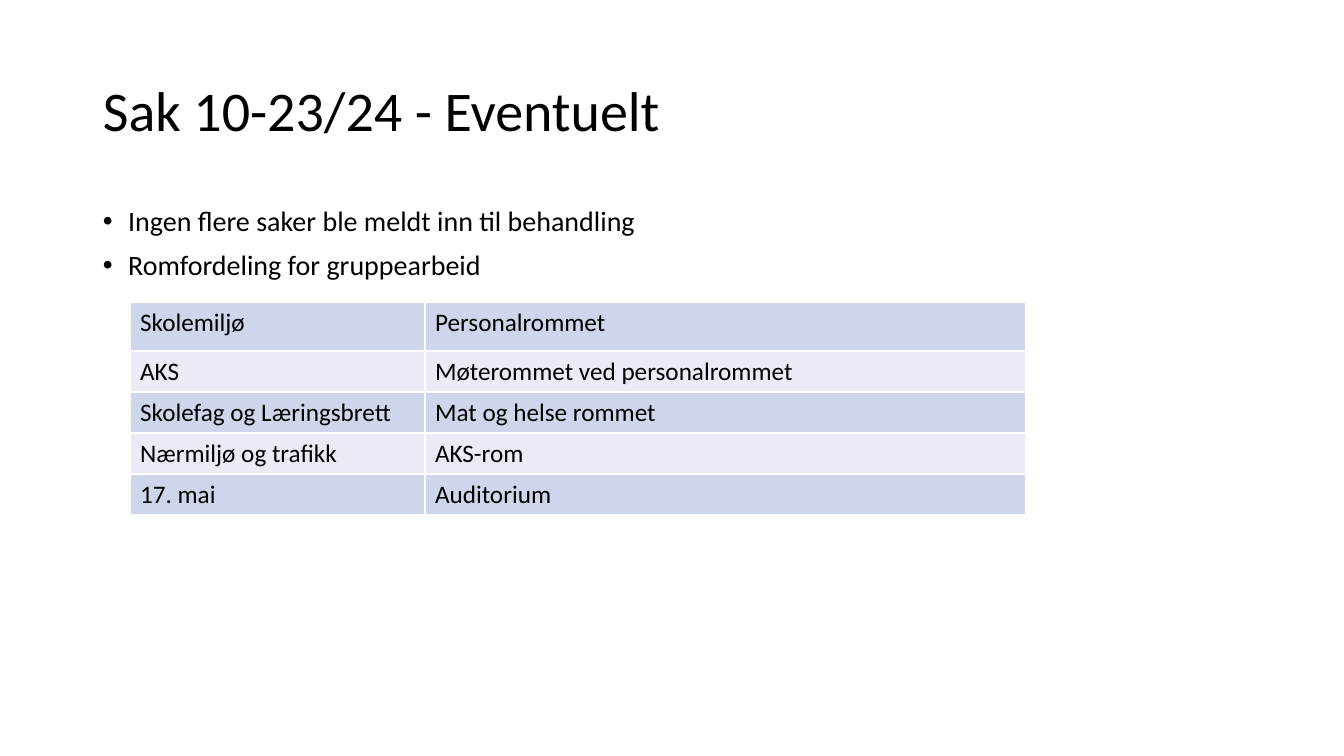
from pptx import Presentation
from pptx import util as u
from pptx.dml.color import RGBColor
from pptx.enum import text
from pptx.oxml import parse_xml
from pptx.oxml.ns import nsdecls

PX = 914400 / 100.8
INK = {"text": "000000", "line": "FFFFFF", "odd": "CFD5EA", "even": "E9EBF5"}


def px(n):
    return round(n * PX)


def write(frame, lines, size=18, space=None, gap=0, bullet=False):
    frame.word_wrap = True
    for i, line in enumerate(lines):
        para = frame.paragraphs[0] if i == 0 else frame.add_paragraph()
        if bullet:
            props = para._p.get_or_add_pPr()
            props.set("marL", str(u.Inches(0.25)))
            props.set("indent", str(-u.Inches(0.25)))
            props.append(parse_xml(f'<a:buFont {nsdecls("a")} typeface="Arial"/>'))
            props.append(parse_xml(f'<a:buChar {nsdecls("a")} char="•"/>'))
        if space:
            para.line_spacing = space
        if i and gap:
            para.space_before = u.Pt(gap)
        run = para.add_run()
        run.text = line
        run.font.name = "Calibri"
        run.font.size = u.Pt(size)
        run.font.color.rgb = RGBColor.from_string(INK["text"])


deck = Presentation()
deck.slide_width, deck.slide_height = px(1344), px(756)
slide = deck.slides.add_slide(deck.slide_layouts[6])

title = slide.shapes.add_textbox(px(93), px(40), px(1159), px(146)).text_frame
title.vertical_anchor = text.MSO_ANCHOR.MIDDLE
write(title, ["Sak 10-23/24 - Eventuelt"], size=40, space=0.9)

body = slide.shapes.add_textbox(px(93), px(202), px(1159), px(480)).text_frame
points = ["Ingen flere saker ble meldt inn til behandling", "Romfordeling for gruppearbeid"]
write(body, points, size=20, space=0.9, gap=10, bullet=True)

rooms = [
    ("Skolemiljø", "Personalrommet"),
    ("AKS", "Møterommet ved personalrommet"),
    ("Skolefag og Læringsbrett", "Mat og helse rommet"),
    ("Nærmiljø og trafikk", "AKS-rom"),
    ("17. mai", "Auditorium"),
]
wide = [295, 601]
high = [49] + [41] * 4
grid = slide.shapes.add_table(
    len(high), len(wide), px(130), px(302), px(sum(wide)), px(sum(high))
).table
grid.first_row = grid.horz_banding = False
for col, w in zip(grid.columns, wide):
    col.width = px(w)
for r, (row, h) in enumerate(zip(grid.rows, high)):
    row.height = px(h)
    for cell, word in zip(row.cells, rooms[r]):
        cell.fill.solid()
        cell.fill.fore_color.rgb = RGBColor.from_string(INK["even" if r % 2 else "odd"])
        write(cell.text_frame, [word])
        props = cell._tc.get_or_add_tcPr()
        for i, side in enumerate("LRTB"):
            props.insert(i, parse_xml(
                f'<a:ln{side} {nsdecls("a")} w="{u.Pt(1)}"><a:solidFill>'
                f'<a:srgbClr val="{INK["line"]}"/></a:solidFill></a:ln{side}>'))

deck.save("out.pptx")
